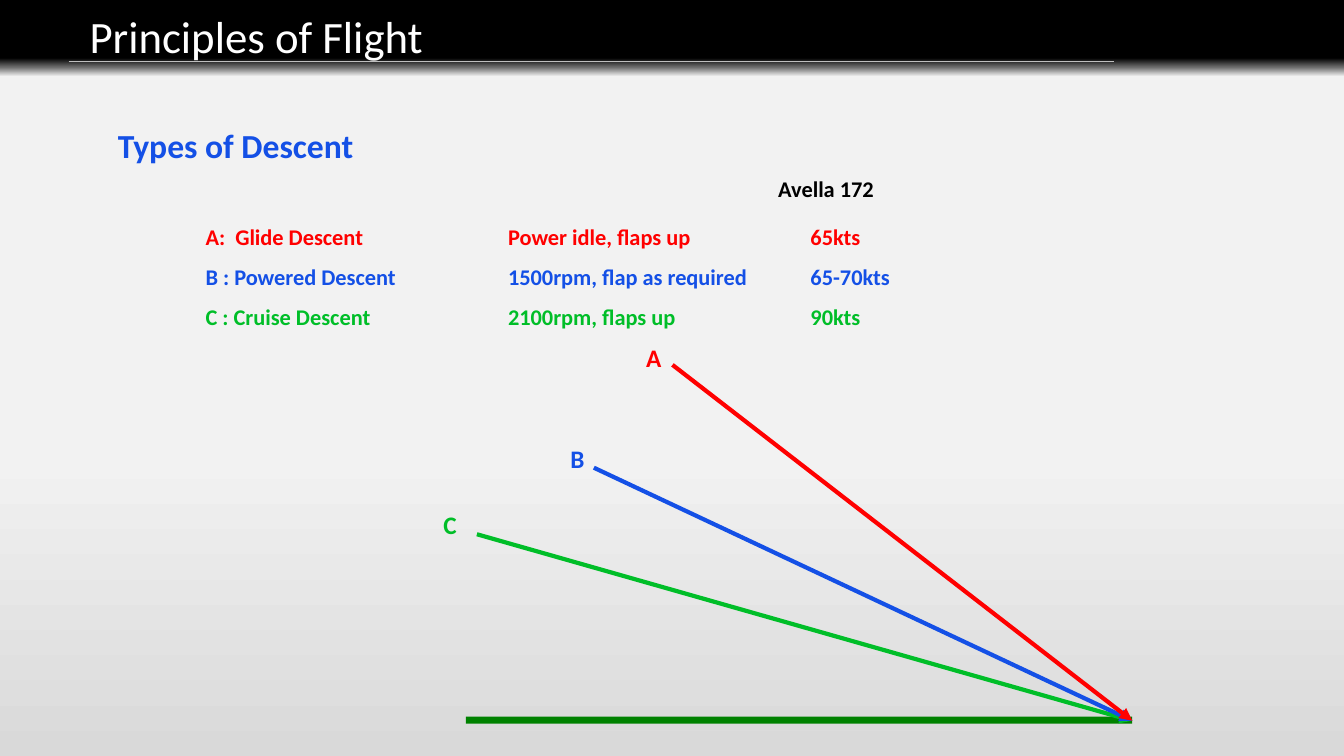
from lxml import etree
from pptx import Presentation
from pptx.dml.color import RGBColor
from pptx.enum.shapes import MSO_CONNECTOR, MSO_SHAPE
from pptx.enum.text import MSO_AUTO_SIZE
from pptx.oxml.ns import qn
from pptx.util import Inches, Pt

STRAIGHT = MSO_CONNECTOR.STRAIGHT
RECTANGLE = MSO_SHAPE.RECTANGLE
GROW = MSO_AUTO_SIZE.SHAPE_TO_FIT_TEXT

THEME = {
    "font": "Calibri",
    "red": "FF0000", "blue": "1450E6", "green": "00BE28", "ground": "008200",
    "black": "000000", "white": "FFFFFF", "rule": "BFBFBF",
    "paper": "F2F2F2", "paper_low": "D9D9D9", "band_fade": "6D6D6D",
    "title": 32, "heading": 24, "label": 18, "body": 16,
}
WIDTH, HEIGHT = 13.33, 7.5

prs = Presentation()
prs.slide_width, prs.slide_height = Inches(WIDTH), Inches(HEIGHT)
slide = prs.slides.add_slide(prs.slide_layouts[6])


def add_text(box, lines, size, bold=True, wrap=True):
    """Add a text box holding one (text, colour) pair per paragraph."""
    frame = slide.shapes.add_textbox(*map(Inches, box)).text_frame
    frame.word_wrap = wrap
    frame.auto_size = GROW
    for index, (text, color) in enumerate(lines):
        paragraph = frame.add_paragraph() if index else frame.paragraphs[0]
        paragraph.text = text
        paragraph.font.name = THEME["font"]
        paragraph.font.size = Pt(THEME[size])
        paragraph.font.bold = bold
        paragraph.font.color.rgb = RGBColor.from_string(THEME[color])
    return frame


def add_line(start, end, color, weight):
    line = slide.shapes.add_connector(STRAIGHT, *map(Inches, start + end))
    line.line.color.rgb = RGBColor.from_string(THEME[color])
    line.line.width = Pt(weight)
    etree.SubElement(line.element.spPr, qn("a:effectLst"))
    return line


# Background and title band: vertical gradients, the band fading into the paper
band = slide.shapes.add_shape(RECTANGLE, 0, 0, Inches(WIDTH), Inches(0.76))
band.shadow.inherit = False
band.line.fill.background()
gradients = [
    (band.fill, band.element,
     [(0, "black"), (76, "black"), (88, "band_fade"), (100, "paper")]),
    (slide.background.fill, slide.background.fill and slide.element.cSld.bg,
     [(0, "paper"), (60, "paper"), (100, "paper_low")]),
]
for fill, element, stops in gradients:
    fill.gradient()
    fill.gradient_angle = 270
    stop_list = element.find(".//" + qn("a:gsLst"))
    for old_stop in list(stop_list):
        stop_list.remove(old_stop)
    for position, color in stops:
        stop = etree.SubElement(stop_list, qn("a:gs"), pos=str(position * 1000))
        etree.SubElement(stop, qn("a:srgbClr"), val=THEME[color])

# Title and headings
add_text((0.79, 0.04, 10.26, 0.64), [("Principles of Flight", "white")], "title", bold=False)
add_line((0.68, 0.61), (11.05, 0.61), "rule", 1)
add_text((1.07, 1.19, 6.93, 0.51), [("Types of Descent", "blue")], "heading")
add_text((7.62, 1.69, 1.55, 0.37), [("Avella 172", "black")], "body")

# Descent types, set in three tabbed columns
COLUMN = 3
descents = add_text((1.94, 2.03, 9.29, 1.31), [
    ("A:  Glide Descent\tPower idle, flaps up\t65kts", "red"),
    ("B : Powered Descent\t1500rpm, flap as required\t65-70kts", "blue"),
    ("C : Cruise Descent\t2100rpm, flaps up\t90kts", "green"),
], "body")
for descent in descents.paragraphs:
    descent.line_spacing = 1.5
    properties = descent._p.get_or_add_pPr()
    tabs = etree.Element(qn("a:tabLst"))
    for column in (1, 2):
        etree.SubElement(tabs, qn("a:tab"), pos=str(Inches(column * COLUMN)), algn="l")
    properties.find(qn("a:lnSpc")).addnext(tabs)

# Ground
ground = slide.shapes.add_shape(RECTANGLE, *map(Inches, (4.62, 7.11, 6.61, 0.07)))
ground.shadow.inherit = False
ground.fill.solid()
ground.fill.fore_color.rgb = RGBColor.from_string(THEME["ground"])
ground.line.fill.background()

# Descent paths, all meeting at the touchdown point
TOUCHDOWN = (11.23, 7.15)
paths = [
    ("C", "green", (4.73, 5.3), (4.3, 5)),
    ("B", "blue", (5.89, 4.64), (5.56, 4.35)),
    ("A", "red", (6.67, 3.62), (6.31, 3.35)),
]
for letter, color, start, corner in paths:
    path_line = add_line(start, TOUCHDOWN, color, 3)
    etree.SubElement(path_line.line._get_or_add_ln(), qn("a:tailEnd"), type="triangle")
    add_text(corner + (0.35, 0.4), [(letter, color)], "label", wrap=False)

prs.save("out.pptx")
